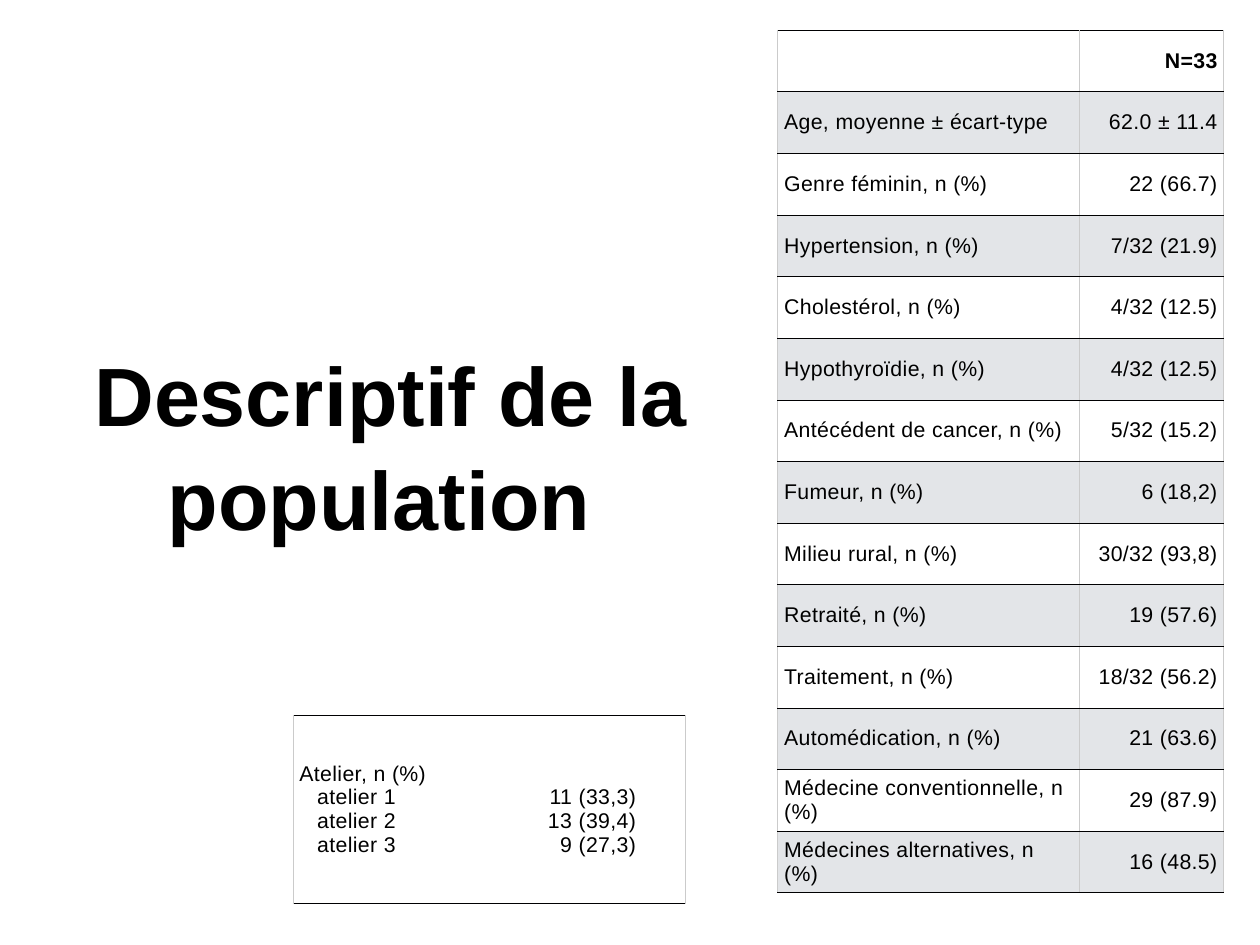
from lxml.etree import SubElement
from pptx import Presentation
from pptx.dml.color import RGBColor
from pptx.enum.text import MSO_ANCHOR as Anchor, PP_ALIGN as Align
from pptx.oxml.ns import qn
from pptx.util import Inches, Pt


def write(frame, text, size=17.3, bold=False, align=Align.LEFT, color="000000",
          spacing=0.3, line_spacing=None, tabs=()):
    frame.word_wrap = True
    for index, line in enumerate(text.split("\n")):
        paragraph = frame.paragraphs[0] if index == 0 else frame.add_paragraph()
        paragraph.alignment = align
        if line_spacing:
            paragraph.line_spacing = line_spacing
        if tabs:
            tab_list = SubElement(paragraph._p.get_or_add_pPr(), qn("a:tabLst"))
            for position, side in tabs:
                SubElement(tab_list, qn("a:tab"), pos=str(Inches(position)), algn=side)
        run = paragraph.add_run()
        run.text = line
        run.font.name = "Arial"
        run.font.size = Pt(size)
        run.font.bold = bold
        run.font.color.rgb = RGBColor.from_string(color)
        run._r.get_or_add_rPr().set("spc", str(round(spacing * 100)))


def format_cell(cell, fill):
    cell.vertical_anchor = Anchor.MIDDLE
    cell.margin_left = cell.margin_right = Inches(0.07)
    cell.margin_top = cell.margin_bottom = 0
    properties = cell._tc.get_or_add_tcPr()
    for side, color, width in (("L", "CBCBCB", 1), ("R", "CBCBCB", 1),
                               ("T", "000001", 0.5), ("B", "000001", 0.5)):
        border = SubElement(properties, qn(f"a:ln{side}"), w=str(Pt(width)))
        solid = SubElement(border, qn("a:solidFill"))
        SubElement(solid, qn("a:srgbClr"), val=color)
    cell.fill.solid()
    cell.fill.fore_color.rgb = RGBColor.from_string(fill)


presentation = Presentation()
presentation.slide_width = Inches(14.22)
presentation.slide_height = Inches(10.67)
slide = presentation.slides.add_slide(presentation.slide_layouts[6])

title = slide.shapes.add_textbox(Inches(0.71), Inches(3.82), Inches(7.4), Inches(2.36))
title_frame = title.text_frame
title_frame.vertical_anchor = Anchor.MIDDLE
title_frame.margin_left = title_frame.margin_right = Inches(0.06)
title_frame.margin_top = title_frame.margin_bottom = Inches(0.06)
write(title_frame, "Descriptif de la population ", size=67.2, bold=True,
      align=Align.CENTER, spacing=0, line_spacing=1.05)

population = [
    ("", "N=33"),
    ("Age, moyenne ± écart-type", "62.0 ± 11.4"),
    ("Genre féminin, n (%)", "22 (66.7)"),
    ("Hypertension, n (%)", "7/32 (21.9)"),
    ("Cholestérol, n (%)", "4/32 (12.5)"),
    ("Hypothyroïdie, n (%)", "4/32 (12.5)"),
    ("Antécédent de cancer, n (%)", "5/32 (15.2)"),
    ("Fumeur, n (%)", "6 (18,2)"),
    ("Milieu rural, n (%)", "30/32 (93,8)"),
    ("Retraité, n (%)", "19 (57.6)"),
    ("Traitement, n (%)", "18/32 (56.2)"),
    ("Automédication, n (%)", "21 (63.6)"),
    ("Médecine conventionnelle, n (%)", "29 (87.9)"),
    ("Médecines alternatives, n (%)", "16 (48.5)"),
]
population_table = slide.shapes.add_table(
    len(population), 2, Inches(8.78), Inches(0.34), Inches(5.03), Inches(9.74)).table
population_table.first_row = population_table.horz_banding = False
for column, width in zip(population_table.columns, (3.4, 1.63)):
    column.width = Inches(width)
for row, values in enumerate(population):
    for column, value in enumerate(values):
        cell = population_table.cell(row, column)
        format_cell(cell, "E3E5E8" if row % 2 else "FFFFFF")
        if value:
            write(cell.text_frame, value, bold=row == 0,
                  align=Align.RIGHT if column else Align.LEFT)

workshop_table = slide.shapes.add_table(
    1, 1, Inches(3.31), Inches(8.08), Inches(4.43), Inches(2.12)).table
workshop_table.first_row = workshop_table.horz_banding = False
workshop_cell = workshop_table.cell(0, 0)
format_cell(workshop_cell, "FFFFFF")
write(workshop_cell.text_frame,
      "Atelier, n (%)\n\tatelier 1\t11 (33,3)\n\tatelier 2\t13 (39,4)\n\tatelier 3\t9 (27,3)",
      tabs=((0.2, "l"), (3.8, "r")))

presentation.save("out.pptx")
